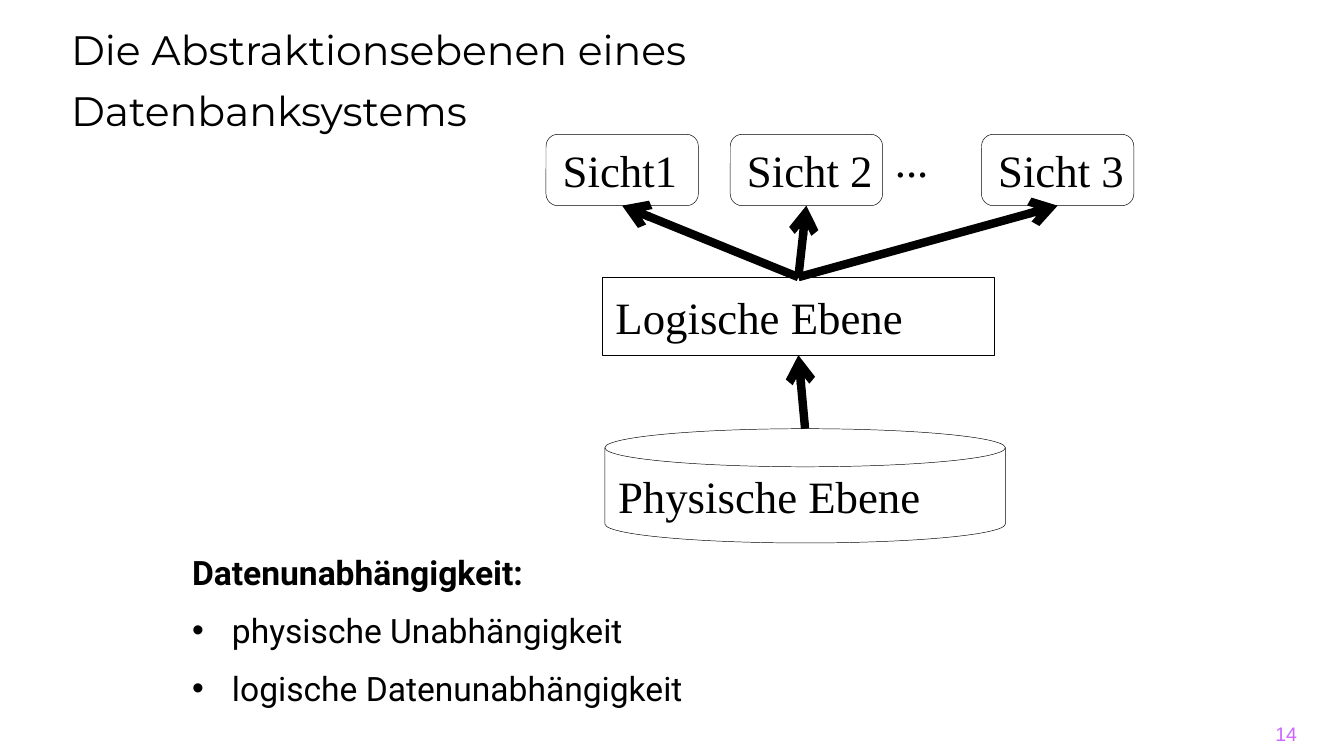
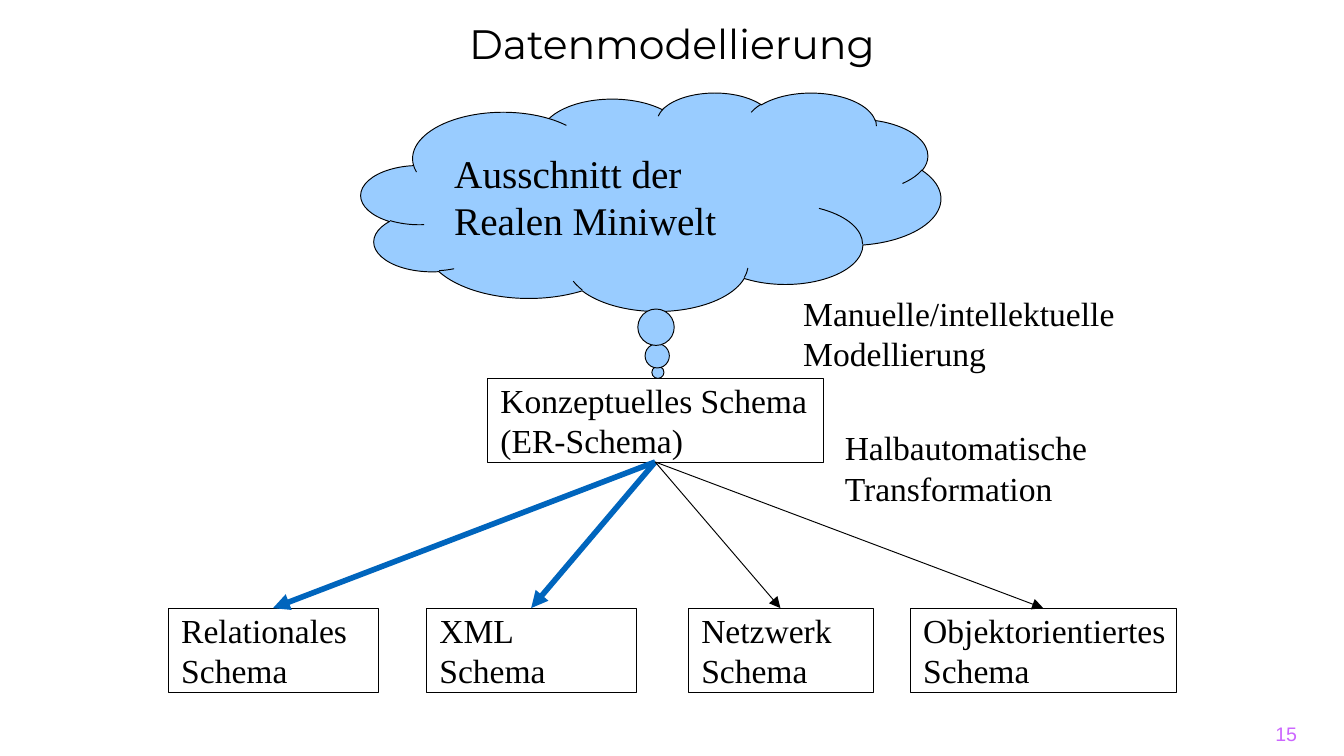
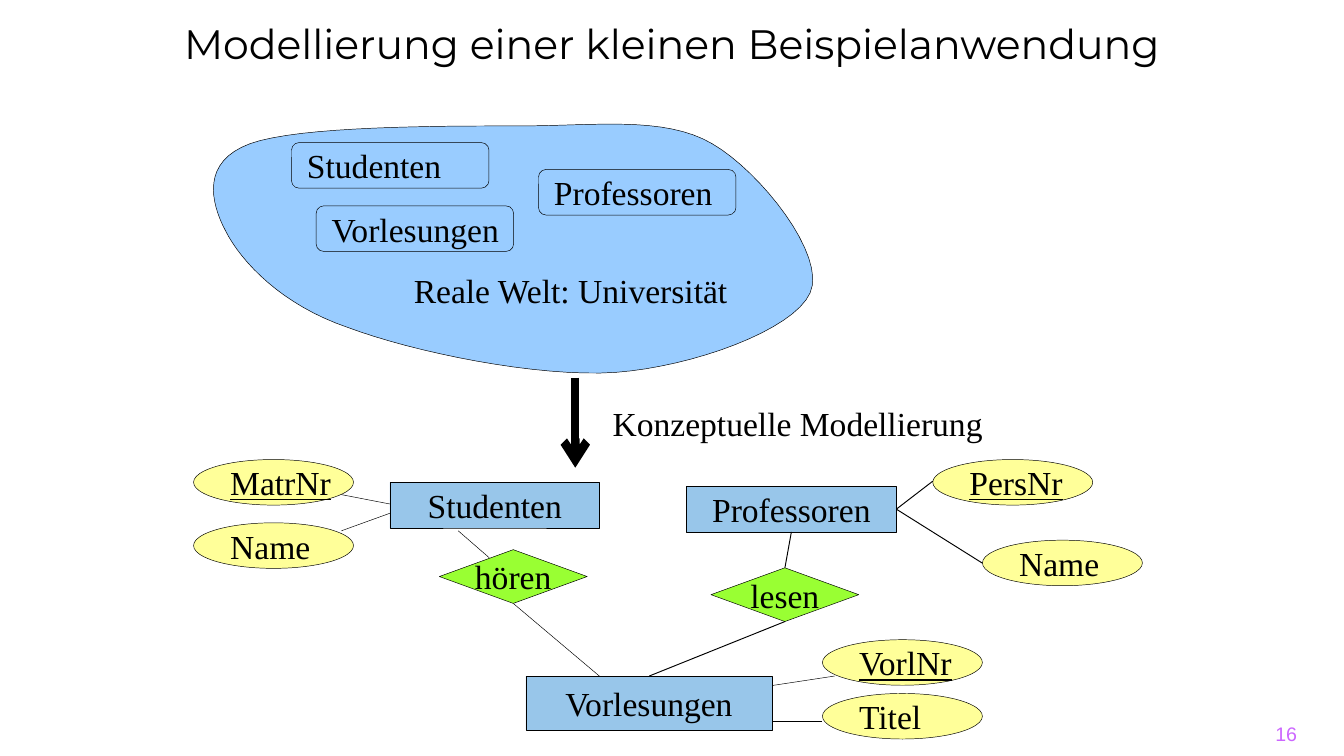
from dataclasses import dataclass

from lxml.etree import SubElement
from pptx import Presentation
from pptx.dml.color import RGBColor
from pptx.enum.shapes import MSO_CONNECTOR, MSO_SHAPE
from pptx.enum.text import MSO_ANCHOR, PP_ALIGN
from pptx.oxml.ns import qn
from pptx.util import Pt


@dataclass(frozen=True)
class Theme:
    black: str = "000000"
    page_violet: str = "CC66FF"
    sky: str = "99CCFF"
    entity_blue: str = "98C6EA"
    attribute_yellow: str = "FFFF99"
    relation_green: str = "99FF33"
    accent_blue: str = "0065BD"
    title_font: str = "Montserrat"
    body_font: str = "Roboto"
    diagram_font: str = "Times New Roman"
    number_font: str = "Arial"
    title_size: float = 22
    level_size: float = 24
    cloud_size: float = 21
    body_size: float = 18
    number_size: float = 10.5
    hairline: float = 0.25
    thin: float = 0.5
    medium: float = 3
    thick: float = 4.5


THEME = Theme()
TOP, LEFT, BOTTOM, RIGHT = range(4)


# Text
def color(value):
    return RGBColor.from_string(value)


def add_run(paragraph, text, font, size, ink=THEME.black, bold=False, underline=False):
    run = paragraph.add_run()
    run.text = text
    run.font.name = font
    run.font.size = Pt(size)
    run.font.color.rgb = color(ink)
    run.font.bold = bold
    run.font.underline = underline


def write(frame, text, size, font=THEME.diagram_font, align=PP_ALIGN.LEFT,
          spacing=None, **style):
    """Write one paragraph for each line of text."""
    for index, line in enumerate(text.split("\n")):
        paragraph = frame.add_paragraph() if index else frame.paragraphs[0]
        paragraph.alignment = align
        if spacing:
            paragraph.line_spacing = spacing
        add_run(paragraph, line, font, size, **style)


def add_box(slide, bounds, wrap=True):
    box = slide.shapes.add_textbox(*map(Pt, bounds))
    box.text_frame.word_wrap = wrap
    return box.text_frame


def add_label(slide, text, bounds, size=THEME.body_size, wrap=True):
    write(add_box(slide, bounds, wrap), text, size)


def add_bullet(paragraph, indent):
    properties = paragraph._p.get_or_add_pPr()
    properties.set("marL", str(Pt(indent)))
    properties.set("indent", str(-Pt(indent)))
    SubElement(properties, qn("a:buFont")).set("typeface", "Arial")
    SubElement(properties, qn("a:buChar")).set("char", "•")


# Shapes and lines
def paint(shape, fill=None, line_width=THEME.hairline):
    shape.shadow.inherit = False
    if fill:
        shape.fill.solid()
        shape.fill.fore_color.rgb = color(fill)
    else:
        shape.fill.background()
    shape.line.color.rgb = color(THEME.black)
    shape.line.width = Pt(line_width)


def add_node(slide, kind, text, bounds, size=THEME.body_size, fill=None,
             line_width=THEME.hairline, wrap=False, **style):
    shape = slide.shapes.add_shape(kind, *map(Pt, bounds))
    paint(shape, fill, line_width)
    frame = shape.text_frame
    frame.word_wrap = wrap
    frame.vertical_anchor = MSO_ANCHOR.MIDDLE
    write(frame, text, size, **style)
    return shape


def add_line(slide, start, end, width=THEME.hairline, ink=THEME.black, head=None):
    """Each end is a point (x, y) or a joint (shape, side)."""
    joints = [isinstance(place[0], (int, float)) is False for place in (start, end)]
    points = [(0, 0) if joined else place for place, joined in zip((start, end), joints)]
    connector = slide.shapes.add_connector(
        MSO_CONNECTOR.STRAIGHT, *(Pt(value) for point in points for value in point))
    if joints[0]:
        connector.begin_connect(*start)
    if joints[1]:
        connector.end_connect(*end)
    connector.line.color.rgb = color(ink)
    connector.line.width = Pt(width)
    if head:
        SubElement(connector.line._get_or_add_ln(), qn("a:tailEnd")).set("type", head)
    SubElement(connector._element.spPr, qn("a:effectLst"))


def add_blob(slide, start, curves, fill, steps=16):
    """Draw a closed outline of cubic curves as a fine polygon."""
    points, origin = [], start
    for first, second, goal in curves:
        for step in range(1, steps + 1):
            t = step / steps
            weights = ((1 - t) ** 3, 3 * t * (1 - t) ** 2, 3 * t * t * (1 - t), t ** 3)
            controls = (origin, first, second, goal)
            points.append(tuple(
                Pt(sum(weight * control[axis] for weight, control in zip(weights, controls)))
                for axis in (0, 1)))
        origin = goal
    builder = slide.shapes.build_freeform(*map(Pt, start))
    builder.add_line_segments(points, close=True)
    paint(builder.convert_to_shape(), fill)


# Shared slide frame
def add_slide(presentation, number, title, title_bounds, align=PP_ALIGN.CENTER):
    slide = presentation.slides.add_slide(presentation.slide_layouts[6])
    write(add_box(slide, title_bounds), title, THEME.title_size, THEME.title_font,
          align, spacing=1.25)
    frame = add_box(slide, (533.5, 382.3, 161.3, 21.6))
    frame.margin_left = frame.margin_right = 0
    frame.vertical_anchor = MSO_ANCHOR.MIDDLE
    write(frame, str(number), THEME.number_size, THEME.number_font,
          PP_ALIGN.RIGHT, ink=THEME.page_violet)
    return slide


# Slides
def build_abstraction_levels(presentation):
    slide = add_slide(presentation, 14, "Die Abstraktionsebenen eines Datenbanksystems",
                      (31, 2.9, 540, 36), PP_ALIGN.LEFT)

    # Data independence
    frame = add_box(slide, (95.8, 292.3, 427, 94.3))
    write(frame, "Datenunabhängigkeit:", THEME.body_size, THEME.body_font, bold=True)
    for text in ("physische Unabhängigkeit", "logische Datenunabhängigkeit"):
        paragraph = frame.add_paragraph()
        paragraph.space_before = Pt(9.4)
        add_bullet(paragraph, 21.4)
        add_run(paragraph, text, THEME.body_font, THEME.body_size)

    # Levels and views
    add_node(slide, MSO_SHAPE.FLOWCHART_MAGNETIC_DISK, "Physische Ebene",
             (324, 229.7, 214.6, 61.2), THEME.level_size)
    logical = add_node(slide, MSO_SHAPE.FLOWCHART_PROCESS, "Logische Ebene",
                       (322.6, 148.5, 210.2, 41.8), THEME.level_size)
    add_line(slide, (431.3, 229.7), (logical, BOTTOM), THEME.thick, head="arrow")
    for name, left in (("Sicht1", 292.5), ("Sicht 2", 391.2), ("Sicht 3", 525.8)):
        view = add_node(slide, MSO_SHAPE.FLOWCHART_ALTERNATE_PROCESS, name,
                        (left, 72, 81.6, 38.2), THEME.level_size)
        add_line(slide, (logical, TOP), (view, BOTTOM), THEME.thick, head="arrow")
    add_label(slide, "...", (472.3, 67.7, 49.7, 36), THEME.level_size)


def build_data_modelling(presentation):
    slide = add_slide(presentation, 15, "Datenmodellierung", (90, 0, 540, 54))

    # Real world and conceptual schema
    cloud = add_node(slide, MSO_SHAPE.CLOUD_CALLOUT, "Ausschnitt der\nRealen Miniwelt",
                     (193.5, 49.5, 310.5, 117), THEME.cloud_size, THEME.sky,
                     THEME.thin, wrap=True)
    cloud.adjustments[0], cloud.adjustments[1] = 0.012, 0.782
    concept = add_node(slide, MSO_SHAPE.RECTANGLE, "Konzeptuelles Schema\n(ER-Schema)",
                       (261, 202.5, 180, 45))
    add_label(slide, "Manuelle/intellektuelle Modellierung", (423.2, 153.4, 198, 51))
    add_label(slide, "Halbautomatische\nTransformation", (445.5, 225.4, 189, 51))

    # Target schemas
    bold_arrow = (THEME.medium, THEME.accent_blue)
    thin_arrow = (THEME.thin, THEME.black)
    for name, left, width, arrow in (
            ("Relationales", 90, 112.5, bold_arrow),
            ("XML", 228.3, 112.5, bold_arrow),
            ("Netzwerk", 368.6, 99, thin_arrow),
            ("Objektorientiertes", 487.5, 142.8, thin_arrow)):
        schema = add_node(slide, MSO_SHAPE.RECTANGLE, f"{name}\nSchema",
                          (left, 325.8, width, 45))
        add_line(slide, (concept, BOTTOM), (schema, TOP), *arrow, head="triangle")


def build_university_example(presentation):
    slide = add_slide(presentation, 16, "Modellierung einer kleinen Beispielanwendung",
                      (0, 0, 720, 67.5))

    # Real world
    add_blob(slide, (134, 77), (
        ((160, 67.5), (236, 67.5), (277.5, 67.5)),
        ((319, 67.5), (356, 62), (381.5, 77)),
        ((407.5, 92), (443, 137), (434, 157)),
        ((425, 177), (371, 196.5), (330, 199.5)),
        ((288, 202.5), (221, 188.5), (186.5, 175.5)),
        ((151, 163.5), (129.5, 140.5), (121, 124)),
        ((112.5, 108), (108, 86.5), (134, 77))), THEME.sky)
    for name, left, top in (("Studenten", 156.2, 76.4), ("Vorlesungen", 169.4, 110.3),
                            ("Professoren", 288.5, 90.8)):
        add_node(slide, MSO_SHAPE.ROUNDED_RECTANGLE, name, (left, top, 105.8, 24.4))
    add_label(slide, "Reale Welt: Universität", (214.6, 141.1, 184.3, 28.8), wrap=False)

    # Step to the model
    add_line(slide, (308.2, 202.3), (308.2, 250.6), THEME.thick, head="arrow")
    add_label(slide, "Konzeptuelle Modellierung", (321.1, 212.4, 250.6, 28.8))

    # Attributes
    for name, left, top, is_key in (
            ("PersNr", 499.7, 246.2, True), ("MatrNr", 103.7, 246.2, True),
            ("Name", 526.3, 289.4, False), ("Name", 103.7, 280.1, False),
            ("Titel", 440.6, 371.5, False), ("VorlNr", 440.6, 342.7, True)):
        add_node(slide, MSO_SHAPE.OVAL, name, (left, top, 85.7, 24.4),
                 fill=THEME.attribute_yellow, underline=is_key)

    # Entities and relationships
    def add_centred(kind, fill, name, bounds):
        return add_node(slide, kind, name, bounds, fill=fill, align=PP_ALIGN.CENTER)

    entity = (MSO_SHAPE.RECTANGLE, THEME.entity_blue)
    relation = (MSO_SHAPE.DIAMOND, THEME.relation_green)
    add_centred(*entity, "Studenten", (208.8, 258.5, 112.5, 24.4))
    professors = add_centred(*entity, "Professoren", (367.7, 260.6, 112.5, 24.4))
    add_centred(*entity, "Vorlesungen", (281.8, 362.3, 131.8, 28.8))
    attend = add_centred(*relation, "hören", (235.4, 294.5, 79.2, 28.8))
    teach = add_centred(*relation, "lesen", (380.9, 304.2, 79.2, 28.8))

    # Links
    for start, end in (((182.9, 265), (208.8, 270)), ((182.9, 284.4), (208.8, 275)),
                       ((245.5, 284.4), (262.1, 298.8)),
                       ((attend, BOTTOM), (321.1, 362.2)),
                       ((414, 367.2), (447.1, 362.2)), ((414, 386.6), (440.6, 386.6))):
        add_line(slide, start, end)
    for start, end in (((professors, RIGHT), (499.7, 257.8)),
                       ((professors, RIGHT), (526.3, 301.7)),
                       ((professors, BOTTOM), (teach, TOP)),
                       ((teach, BOTTOM), (347.8, 362.2))):
        add_line(slide, start, end, THEME.thin)


def main():
    presentation = Presentation()
    presentation.slide_width, presentation.slide_height = Pt(720), Pt(405)
    build_abstraction_levels(presentation)
    build_data_modelling(presentation)
    build_university_example(presentation)
    presentation.save("out.pptx")


if __name__ == "__main__":
    main()
